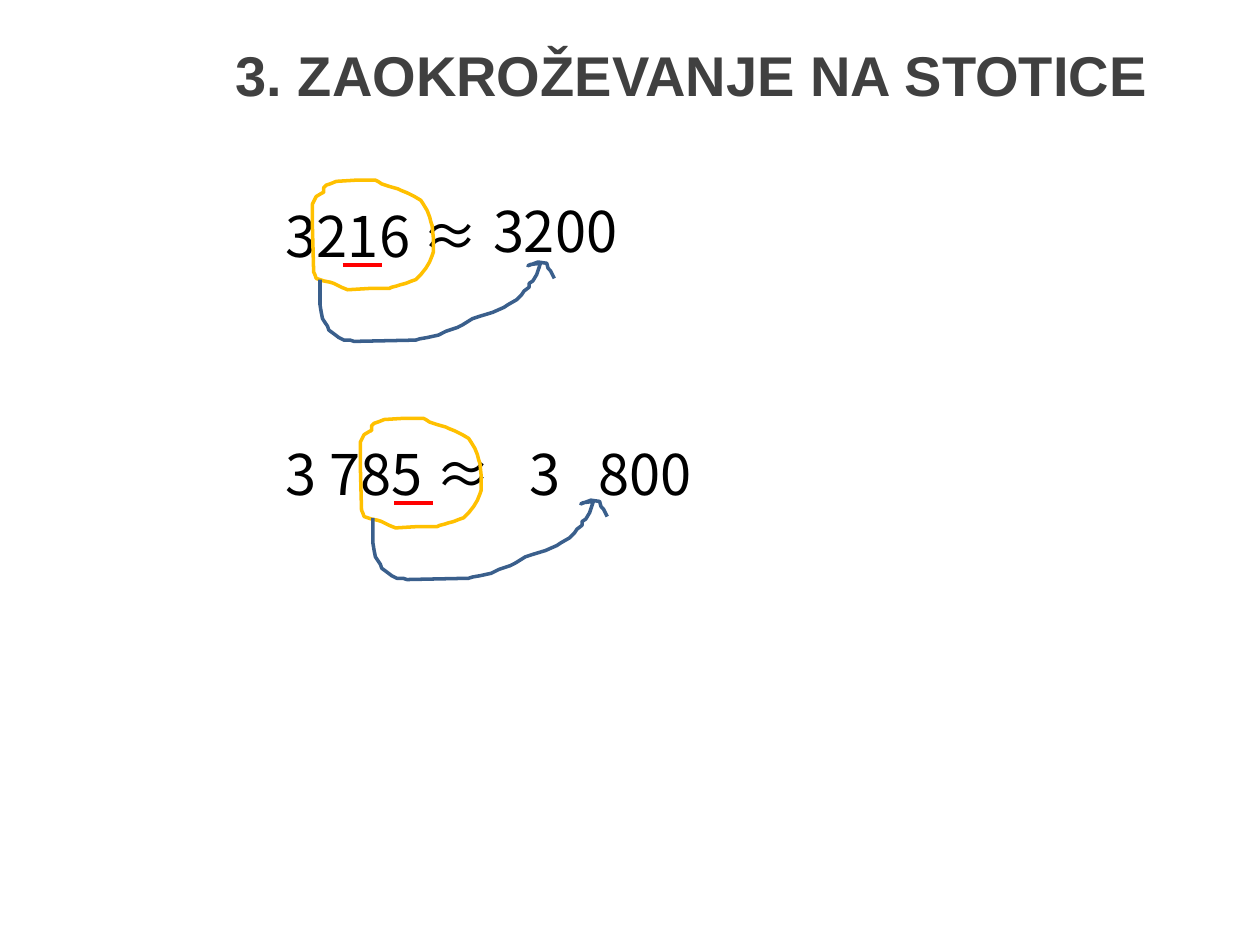
"""Build a slide that shows two examples of rounding to hundreds."""
from dataclasses import dataclass

from pptx import Presentation
from pptx.dml.color import RGBColor
from pptx.enum import shapes, text
from pptx.oxml import parse_xml
from pptx.oxml.ns import nsdecls
from pptx.shapes.autoshape import Shape
from pptx.slide import Slide
from pptx.util import Inches, Pt

BLACK = RGBColor(0x00, 0x00, 0x00)
GRAY = RGBColor(0x40, 0x40, 0x40)
ORANGE = RGBColor(0xFF, 0xC0, 0x00)
RED = RGBColor(0xFF, 0x00, 0x00)
BLUE = RGBColor(0x3A, 0x5F, 0x8C)
NUMBER_FONT = "Noto Sans CJK KR"
HUNDREDTH = Inches(0.01)

RING = [
    (9, 10), (8, 10), (3, 13), (0, 19), (0, 37), (1, 73), (2, 75), (3, 78),
    (9, 80), (14, 81), (17, 82), (23, 85), (28, 87), (45, 86), (61, 86),
    (63, 85), (67, 84), (70, 83), (74, 82), (79, 80), (82, 79), (86, 75),
    (90, 70), (93, 65), (95, 60), (96, 57), (96, 46), (95, 36), (94, 33),
    (93, 29), (91, 24), (88, 19), (86, 16), (81, 13), (75, 10), (70, 8),
    (68, 7), (61, 5), (55, 3), (52, 1), (50, 0), (35, 0), (19, 1), (14, 3),
    (11, 4), (9, 6),
]
ARROW = [
    (0, 14), (0, 24), (0, 34), (1, 40), (2, 45), (4, 48), (6, 51), (7, 54),
    (11, 57), (15, 60), (19, 62), (24, 62), (27, 63), (76, 62), (79, 61),
    (85, 60), (94, 58), (100, 55), (109, 52), (113, 50), (121, 45),
    (127, 43), (137, 40), (146, 36), (149, 34), (156, 30), (160, 26),
    (162, 23), (166, 20), (166, 17), (169, 15), (172, 10), (174, 4),
    (175, 1), (167, 2), (165, 3), (173, 0), (180, 1), (181, 5), (183, 7),
    (185, 11), (186, 13),
]


@dataclass(frozen=True)
class Label:
    words: str
    left: float
    top: float
    width: float


@dataclass(frozen=True)
class Example:
    labels: tuple[Label, ...]
    ring_left: float
    underline_left: float
    arrow_left: float
    top: float


EXAMPLES = (
    Example(
        (Label("3216 ≈", 2.17, 1.55, 1.89), Label("3", 3.82, 1.51, 1.65),
         Label("200", 4.06, 1.51, 1.55)),
        ring_left=2.48, underline_left=2.72, arrow_left=2.54, top=1.43,
    ),
    Example(
        (Label("3 785 ≈", 2.17, 3.44, 2.68), Label("3", 4.1, 3.44, 1.65),
         Label("800", 4.65, 3.44, 1.53)),
        ring_left=2.86, underline_left=3.13, arrow_left=2.96, top=3.32,
    ),
)


def add_title(slide: Slide, words: str) -> None:
    title = slide.shapes.title
    title.left, title.top = Inches(1.77), Inches(0)
    title.width, title.height = Inches(8.23), Inches(1.17)
    frame = title.text_frame
    frame.text = words
    frame.vertical_anchor = text.MSO_ANCHOR.MIDDLE
    paragraph = frame.paragraphs[0]
    paragraph.alignment = text.PP_ALIGN.LEFT
    paragraph.font.name, paragraph.font.size = "Arial", Pt(32)
    paragraph.font.bold = True
    paragraph.font.color.rgb = GRAY


def add_label(slide: Slide, label: Label) -> None:
    box = slide.shapes.add_textbox(
        Inches(label.left), Inches(label.top), Inches(label.width), Inches(0.64))
    frame = box.text_frame
    frame.word_wrap = True
    frame.auto_size = text.MSO_AUTO_SIZE.SHAPE_TO_FIT_TEXT
    frame.text = label.words
    font = frame.paragraphs[0].font
    font.name, font.size = NUMBER_FONT, Pt(32)
    font.color.rgb = BLACK


def add_stroke(slide: Slide, points: list[tuple[int, int]], left: float,
               top: float, color: RGBColor, close: bool) -> Shape:
    builder = slide.shapes.build_freeform(*points[0], scale=HUNDREDTH)
    builder.add_line_segments(points[1:], close=close)
    stroke = builder.convert_to_shape(Inches(left), Inches(top))
    stroke.shadow.inherit = False
    stroke.fill.background()
    stroke.line.color.rgb = color
    stroke.line.width = Pt(2)
    return stroke


def add_underline(slide: Slide, left: float, top: float) -> None:
    line = slide.shapes.add_connector(
        shapes.MSO_CONNECTOR.STRAIGHT, Inches(left), Inches(top),
        Inches(left + 0.31), Inches(top))
    line.line.color.rgb = RED
    line.line.width = Pt(2.25)
    line._element.spPr.append(parse_xml(f"<a:effectLst {nsdecls('a')}/>"))


def add_example(slide: Slide, example: Example) -> None:
    number, *rounded = example.labels
    add_label(slide, number)
    add_stroke(slide, RING, example.ring_left, example.top, ORANGE, close=True)
    add_underline(slide, example.underline_left, example.top + 0.67)
    add_stroke(slide, ARROW, example.arrow_left, example.top + 0.65, BLUE, close=False)
    for label in rounded:
        add_label(slide, label)


def main() -> None:
    presentation = Presentation()
    presentation.slide_width, presentation.slide_height = Inches(10), Inches(7.5)
    slide = presentation.slides.add_slide(presentation.slide_layouts[5])
    add_title(slide, "3. ZAOKROŽEVANJE NA STOTICE")
    for example in EXAMPLES:
        add_example(slide, example)
    presentation.save("out.pptx")


if __name__ == "__main__":
    main()
